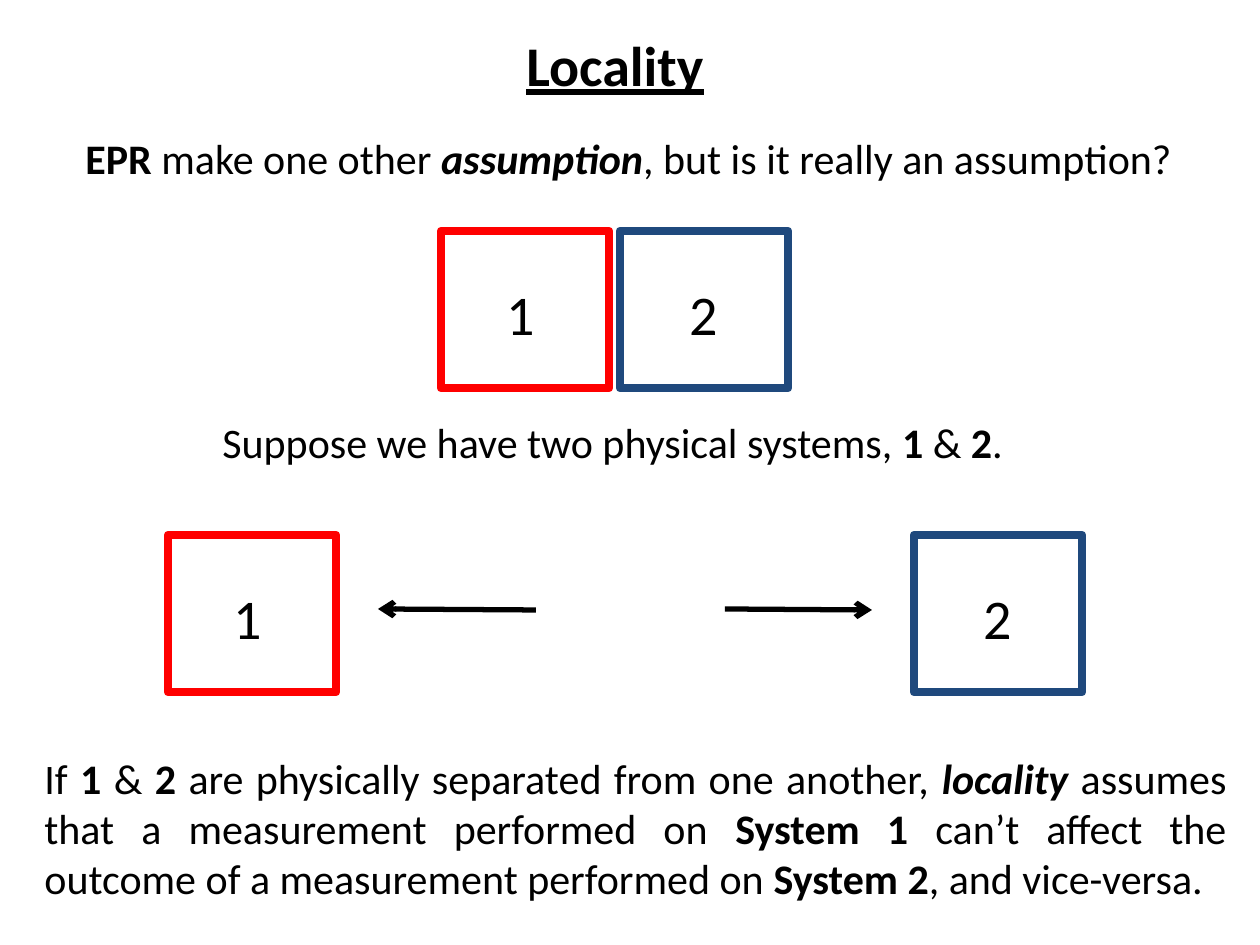
"""Build the slide on locality and two separated systems."""
from lxml.etree import SubElement
from pptx import Presentation
from pptx.dml.color import RGBColor
from pptx.enum.shapes import MSO_CONNECTOR as Connector, MSO_SHAPE as Shape
from pptx.enum.text import MSO_AUTO_SIZE as AutoSize, PP_ALIGN as Align
from pptx.oxml.ns import qn
from pptx.util import Pt

PX = 914400 // 126
FONT = "Calibri"
BLACK, RED, BLUE = "000000", "FF0000", "1F497D"
SYSTEM_WIDTH, SYSTEM_HEIGHT = 168, 157


def px(*lengths):
    """Turn pixel lengths into EMU."""
    return [length * PX for length in lengths]


def color(value):
    """Turn a hex string into a colour."""
    return RGBColor.from_string(value)


def add_text(page, place, spans, size=24, wrap=False, align=Align.LEFT):
    """Add one paragraph of (text, style) spans; b, i and u mark the style."""
    box = page.shapes.add_textbox(*px(*place))
    frame = box.text_frame
    frame.word_wrap = wrap
    frame.auto_size = AutoSize.SHAPE_TO_FIT_TEXT
    para = frame.paragraphs[0]
    para.alignment = align
    para.font.name = FONT
    para.font.size = Pt(size)
    para.font.color.rgb = color(BLACK)
    for text, style in spans:
        span = para.add_run()
        span.text = text
        for mark, name in (("b", "bold"), ("i", "italic"), ("u", "underline")):
            if mark in style:
                setattr(span.font, name, True)


def add_system(page, left, top, label, line, indent):
    """Add an outlined box for a physical system with its number."""
    box = page.shapes.add_shape(
        Shape.RECTANGLE, *px(left, top, SYSTEM_WIDTH, SYSTEM_HEIGHT))
    box.shadow.inherit = False
    box.fill.background()
    box.line.color.rgb = color(line)
    box.line.width = Pt(5)
    add_text(page, (left + indent, top + 42, 54, 81), [(label, "")], size=32)


def add_arrow(page, start, end):
    """Add a black line with an open arrowhead at its end."""
    arrow = page.shapes.add_connector(Connector.STRAIGHT, *px(*start, *end))
    arrow.line.color.rgb = color(BLACK)
    arrow.line.width = Pt(3)
    SubElement(arrow.line._get_or_add_ln(), qn("a:tailEnd"), type="arrow")
    SubElement(arrow._element.spPr, qn("a:effectLst"))


def main():
    """Build and save the deck."""
    deck = Presentation()
    deck.slide_width, deck.slide_height = px(1260, 945)
    page = deck.slides.add_slide(deck.slide_layouts[6])

    add_text(page, (514, 24, 205, 81), [("Locality", "bu")], size=32)
    add_text(page, (73, 126, 1116, 64), [
        ("EPR", "b"), (" make one other ", ""), ("assumption", "bi"),
        (", but is it really an assumption?", "")])
    add_text(page, (210, 410, 818, 64), [
        ("Suppose we have two physical systems, ", ""), ("1", "b"),
        (" & ", ""), ("2", "b"), (".", "")])
    add_text(page, (32, 746, 1207, 165), [
        ("If ", ""), ("1", "b"), (" & ", ""), ("2", "b"),
        (" are physically separated from one another, ", ""),
        ("locality", "bi"),
        (" assumes that a measurement performed on ", ""),
        ("System 1", "b"),
        (" can’t affect the outcome of a measurement performed on ", ""),
        ("System 2", "b"), (", and vice-versa.", "")],
        wrap=True, align=Align.JUSTIFY)

    for top, first, second in ((231, 441, 620), (535, 168, 914)):
        add_system(page, first, top, "1", RED, 53)
        add_system(page, second, top, "2", BLUE, 57)
    add_arrow(page, (725, 609), (872, 610))
    add_arrow(page, (536, 610), (378, 609))
    deck.save("out.pptx")


if __name__ == "__main__":
    main()
